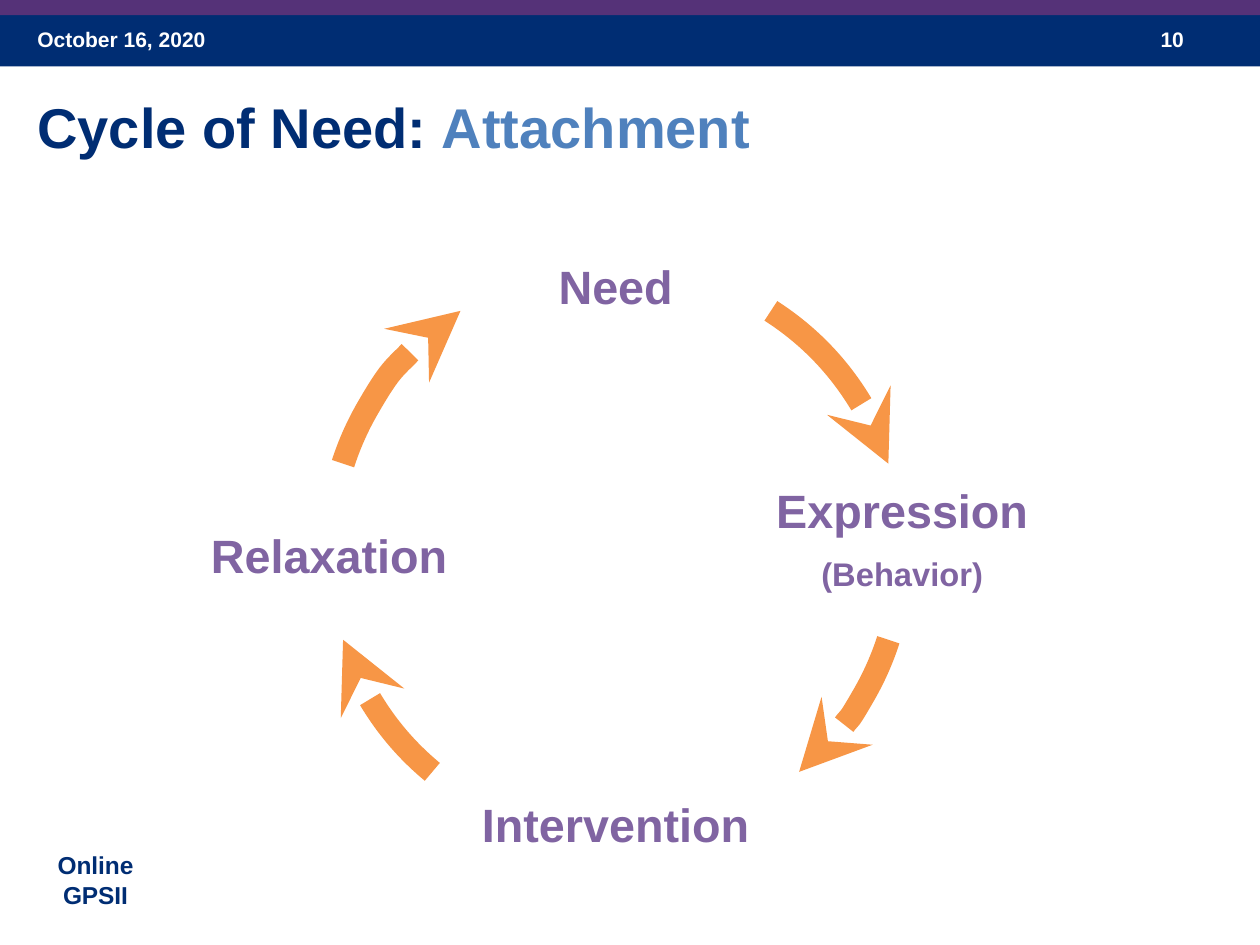
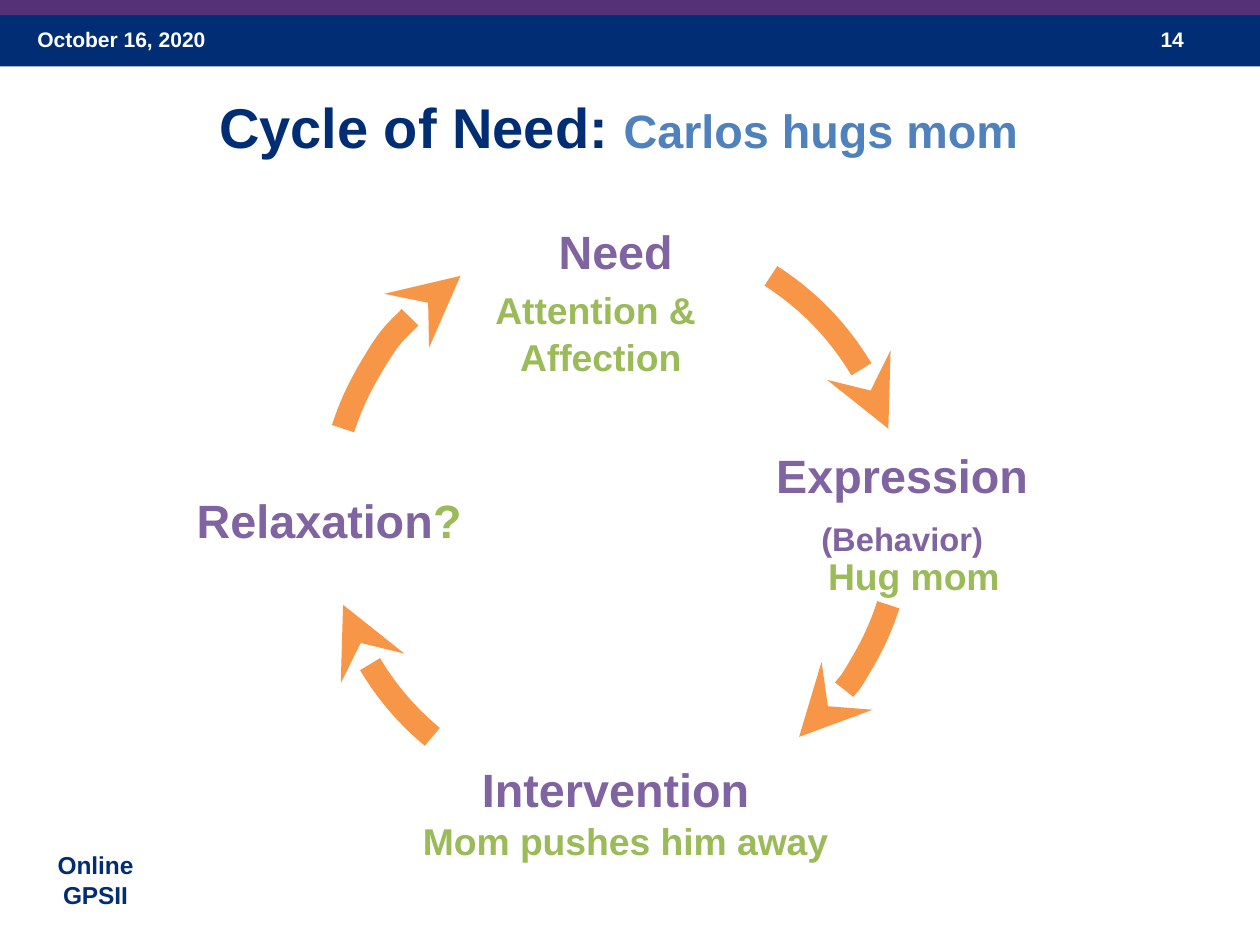
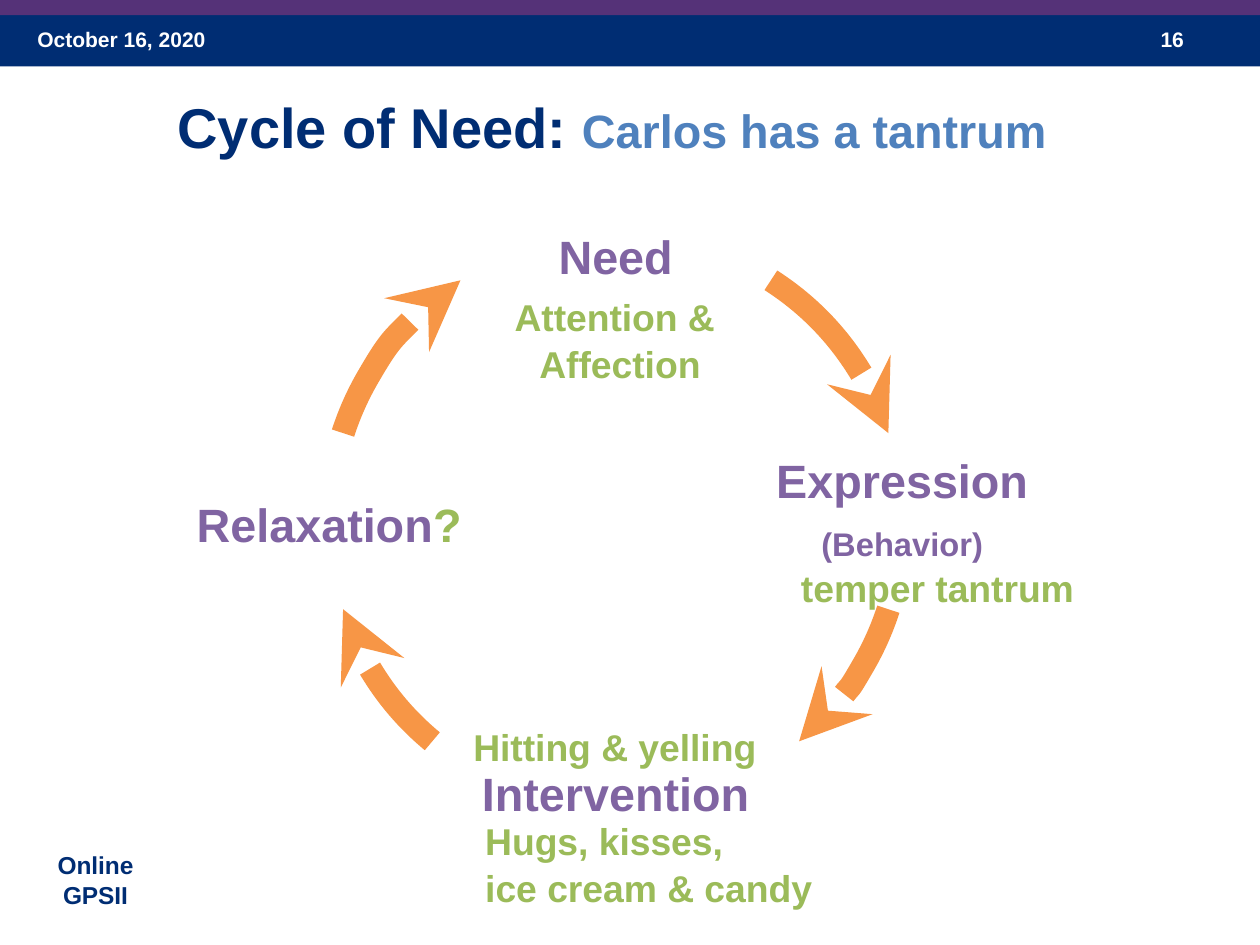
from lxml import etree
from pptx import Presentation
from pptx import util as u
from pptx.dml.color import RGBColor
from pptx.enum import shapes, text
from pptx.oxml import ns

COLORS = {
    "navy": "002D73", "plum": "553278", "white": "FFFFFF", "blue": "4F81BD",
    "violet": "8064A2", "green": "9BBB59", "orange": "F79646",
}
FONT = "Arial"
LEFT, CENTER = text.PP_ALIGN.LEFT, text.PP_ALIGN.CENTER

presentation = Presentation()
presentation.slide_width, presentation.slide_height = u.Pt(540), u.Pt(405)


def add_text(slide, box, paragraphs, size=16, color="green", align=LEFT,
             margins=(7.2, 3.6), gap=0):
    """Each paragraph is a list of runs: a string, or (string, size, color)."""
    shape = slide.shapes.add_textbox(*[u.Pt(length) for length in box])
    frame = shape.text_frame
    frame.word_wrap = True
    frame.margin_left = frame.margin_right = u.Pt(margins[0])
    frame.margin_top = frame.margin_bottom = u.Pt(margins[1])
    for index, runs in enumerate(paragraphs):
        paragraph = frame.paragraphs[0] if index == 0 else frame.add_paragraph()
        paragraph.alignment = align
        paragraph.line_spacing = 1.05
        paragraph.space_before = u.Pt(gap if index else 0)
        for item in runs:
            words, run_size, run_color = (item, size, color) if isinstance(item, str) else item
            run = paragraph.add_run()
            run.text = words
            run.font.name, run.font.size, run.font.bold = FONT, u.Pt(run_size), True
            run.font.color.rgb = RGBColor.from_string(COLORS[run_color])


# Cycle geometry: labels sit around a ring, arcs run clockwise between them
RING_X, RADIUS = 263.9, 122.8
LABEL_WIDTH = 150
ARCS = [(302.8, 342.1), (17.9, 50.2), (129.8, 162.1), (197.9, 237.2)]

# Green notes of each slide: box, lines, alignment
ATTENTION = [["Attention & "], ["Affection"]]
cycles = [
    dict(number="10", subtitle=("Attachment", 24, "blue"), align=LEFT,
         ring_y=236.5, question=[], notes=[]),
    dict(number="14", subtitle=("Carlos hugs mom", 20, "blue"), align=CENTER,
         ring_y=221.5, question=[("?", 20, "green")], notes=[
             ((201.5, 118.8, 112, 46), ATTENTION, CENTER),
             ((347.8, 232.6, 96, 27), [["Hug mom"]], LEFT),
             ((174.2, 346.3, 196, 27), [["Mom pushes him away"]], LEFT)]),
    dict(number="16", subtitle=("Carlos has a tantrum ", 20, "blue"), align=CENTER,
         ring_y=223.4, question=[("?", 20, "green")], notes=[
             ((209.7, 121.7, 112, 46), ATTENTION, CENTER),
             ((336.2, 237.6, 140, 27), [["temper tantrum"]], LEFT),
             ((195.8, 306, 144, 27), [["Hitting & yelling"]], LEFT),
             ((200.9, 346.3, 164, 46), [["Hugs, kisses,"], ["ice cream & candy"]], LEFT)]),
]

for cycle in cycles:
    slide = presentation.slides.add_slide(presentation.slide_layouts[6])

    # Header bands
    for top, height, color in [(5, 23.5, "navy"), (0, 6.5, "plum")]:
        band = slide.shapes.add_shape(
            shapes.MSO_SHAPE.RECTANGLE, 0, u.Pt(top), presentation.slide_width, u.Pt(height))
        band.shadow.inherit = False
        band.fill.solid()
        band.fill.fore_color.rgb = RGBColor.from_string(COLORS[color])
        band.line.fill.background()

    # Date, slide number, footer and title
    add_text(slide, (8.9, 7.2, 126, 21.6), [["October 16, 2020"]], size=9, color="white")
    add_text(slide, (490.3, 7.2, 40, 21.6), [[cycle["number"]]], size=9, color="white")
    add_text(slide, (15.8, 360, 50.4, 29), [["Online"], ["GPSII"]],
             size=10.5, color="navy", align=CENTER)
    add_text(slide, (8.9, 34.6, 512.6, 50.4), [["Cycle of Need: ", cycle["subtitle"]]],
             size=24, color="navy", align=cycle["align"])

    # Stage labels: horizontal and vertical offset from the ring centre
    stages = [
        (0, -127, [["Need"]]),
        (RADIUS, -31, [["Expression"], [("(Behavior)", 14, "violet")]]),
        (0, 103.2, [["Intervention"]]),
        (-RADIUS, -12, [["Relaxation"] + cycle["question"]]),
    ]
    for across, down, lines in stages:
        box = (RING_X + across - LABEL_WIDTH / 2, cycle["ring_y"] + down,
               LABEL_WIDTH, 24 * len(lines))
        add_text(slide, box, lines, size=20, color="violet", align=CENTER,
                 margins=(0, 0), gap=5.9)

    # Arc arrows
    for start, end in ARCS:
        arc = slide.shapes.add_shape(
            shapes.MSO_SHAPE.ARC, u.Pt(RING_X - RADIUS), u.Pt(cycle["ring_y"] - RADIUS),
            u.Pt(2 * RADIUS), u.Pt(2 * RADIUS))
        # Adjustments count 100000ths, angles 60000ths of a degree
        arc.adjustments[0], arc.adjustments[1] = start * 0.6, end * 0.6
        arc.shadow.inherit = False
        arc.fill.background()
        arc.line.width = u.Pt(10)
        arc.line.color.rgb = RGBColor.from_string(COLORS["orange"])
        etree.SubElement(arc.line._get_or_add_ln(), ns.qn("a:tailEnd"), type="stealth")

    # Notes
    for box, lines, align in cycle["notes"]:
        add_text(slide, box, lines, align=align)

presentation.save("out.pptx")
